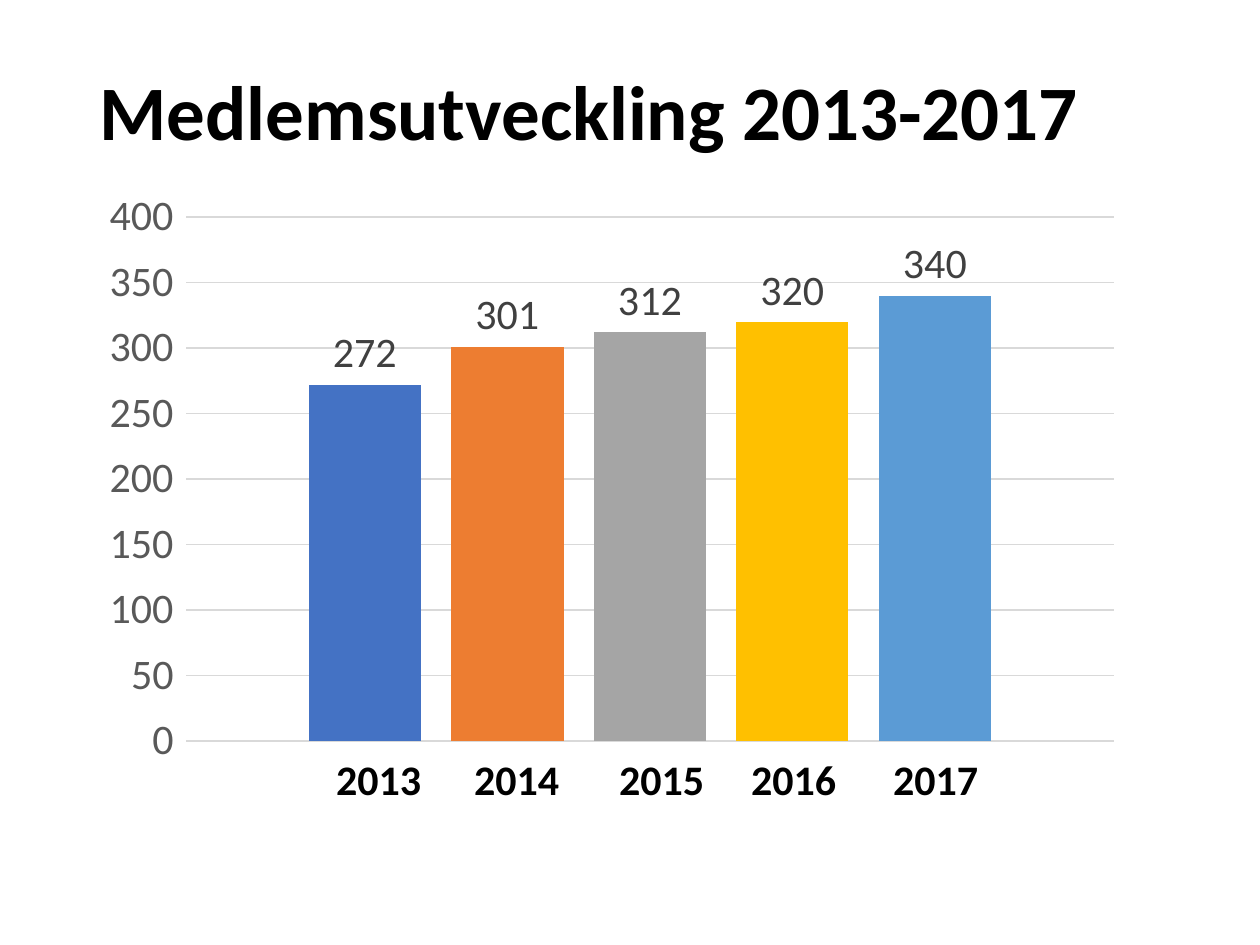
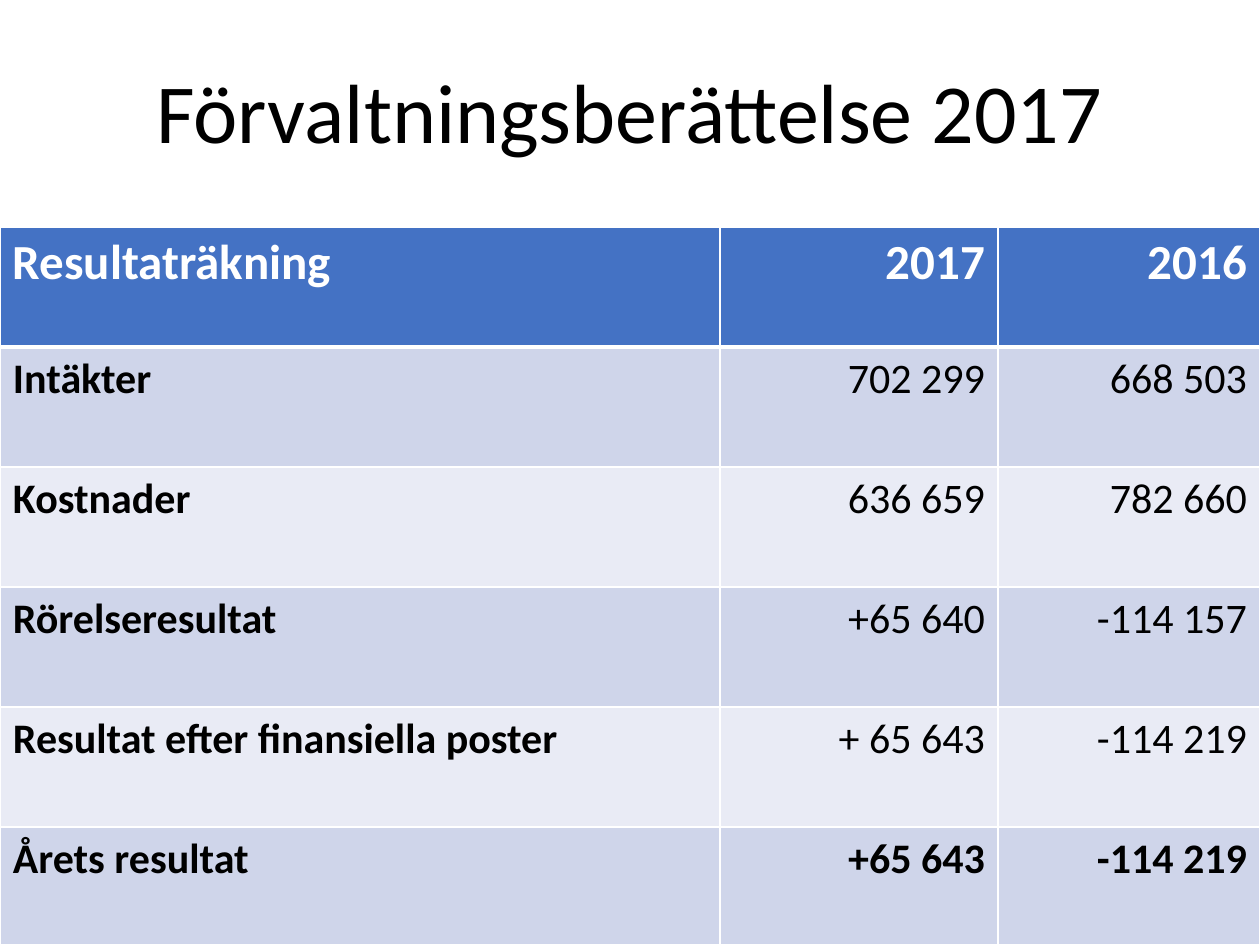
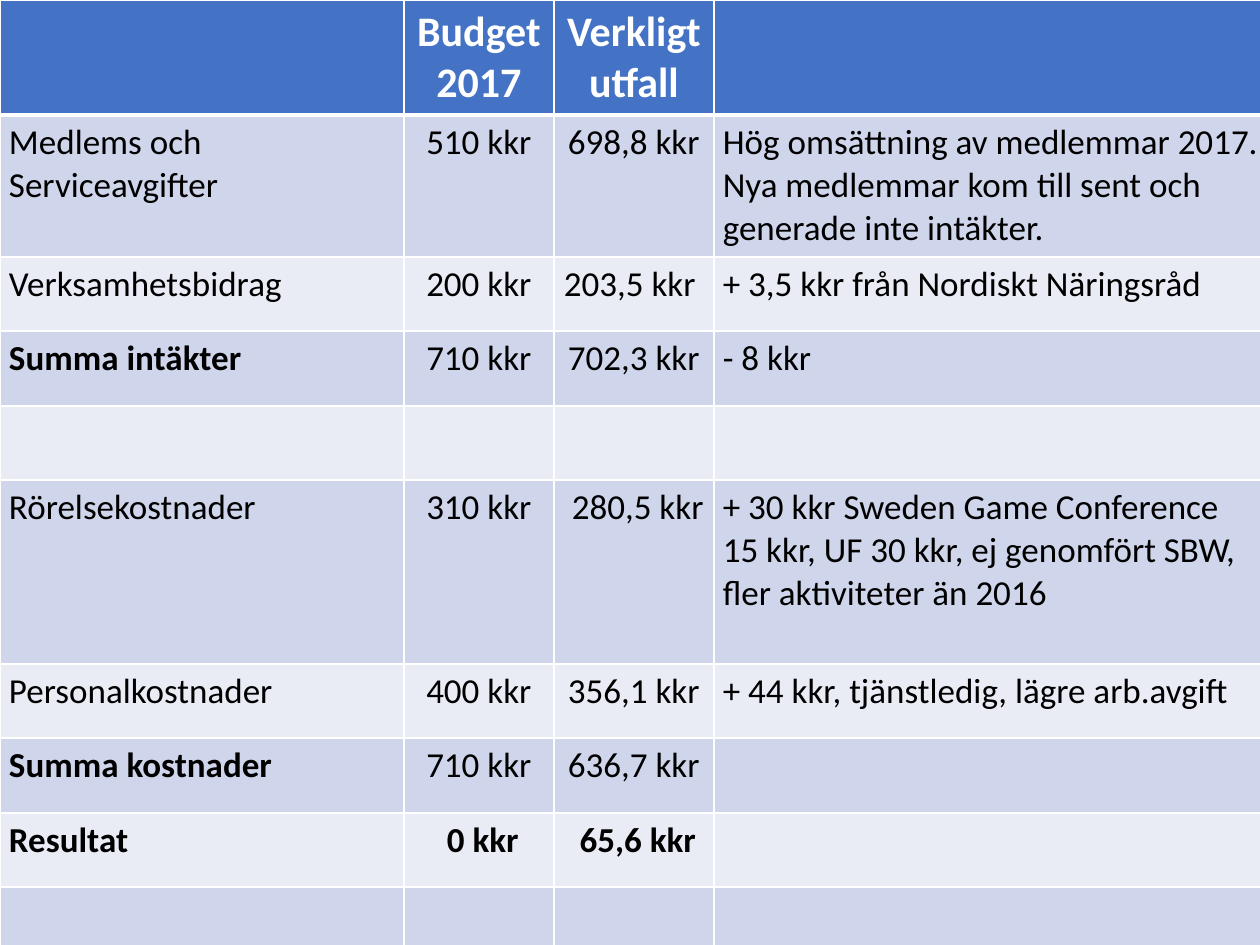
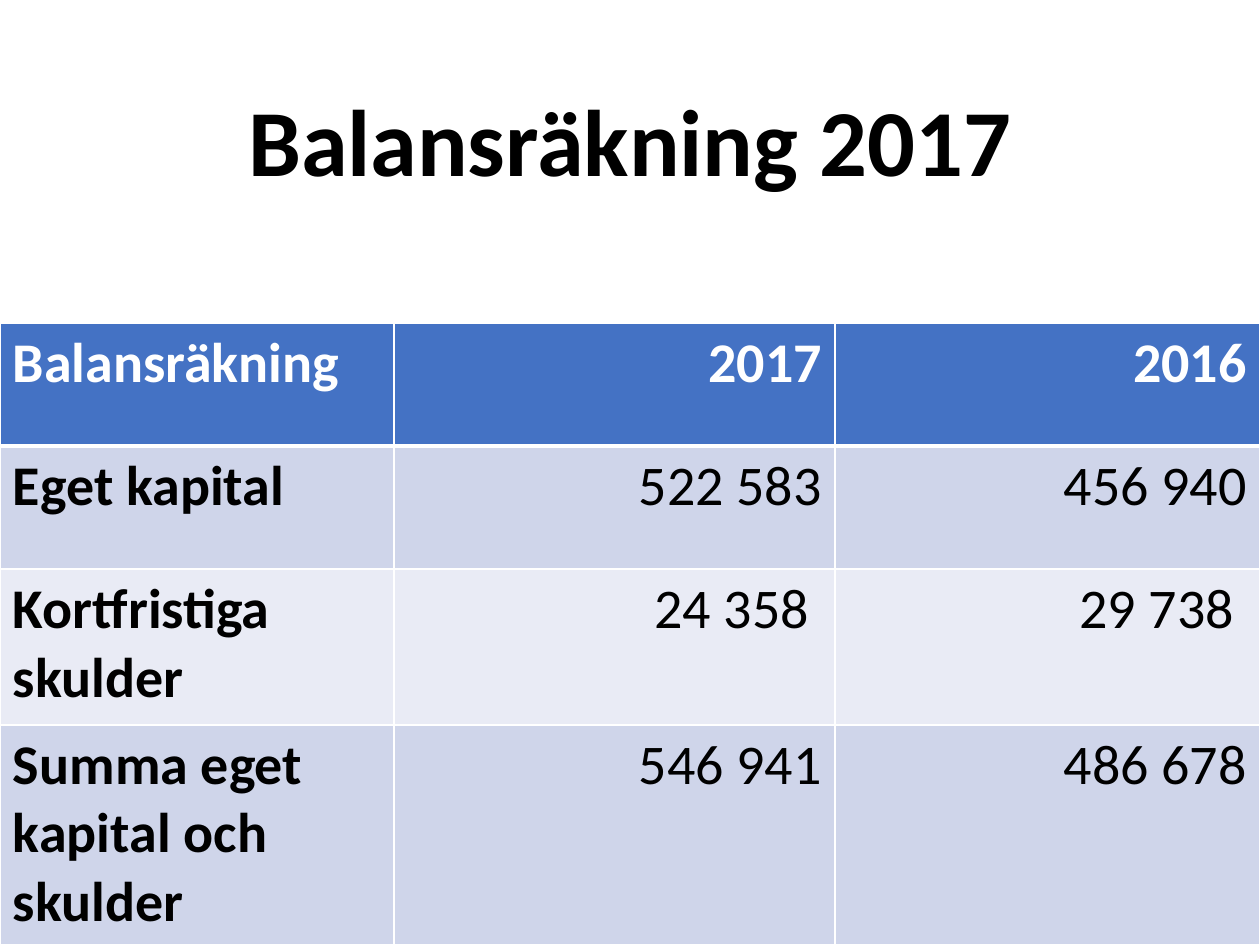
import pptx
import pptx.chart.data
import pptx.dml.color
import pptx.enum.chart
import pptx.enum.text
import pptx.oxml
import pptx.oxml.ns
import pptx.util
from lxml import etree

PX = pptx.util.Inches(10) // 1260
FONT = "Calibri"
BLACK, WHITE, BLUE = "000000", "FFFFFF", "4472C4"
BANDS = ["E9EBF5", "CFD5EA"]
ALIGN = {
    "l": pptx.enum.text.PP_ALIGN.LEFT,
    "c": pptx.enum.text.PP_ALIGN.CENTER,
    "r": pptx.enum.text.PP_ALIGN.RIGHT,
}
hue = pptx.dml.color.RGBColor.from_string
qn = pptx.oxml.ns.qn


def write(par, text, size, bold=False, color=BLACK, align="l"):
    """Add one run per line of text to a paragraph."""
    par.alignment = ALIGN[align]
    for num, line in enumerate(text.split("\n")):
        if num:
            par.add_line_break()
        run = par.add_run()
        run.text = line
        run.font.name = FONT
        run.font.size = pptx.util.Pt(size)
        run.font.bold = bold
        run.font.color.rgb = hue(color)


def grid(page, top, cols, rows, data, sizes, aligns, strong, inset):
    """Add a banded table; sizes are for head and body, strong lists bold cells."""
    frame = page.shapes.add_table(
        len(rows), len(cols), 0, top * PX, sum(cols) * PX, sum(rows) * PX)
    table = frame.table
    for col, width in zip(table.columns, cols):
        col.width = width * PX
    for r, (row, height) in enumerate(zip(table.rows, rows)):
        row.height = height * PX
        for c, cell in enumerate(row.cells):
            cell.margin_left = cell.margin_right = inset * PX
            props = cell._tc.get_or_add_tcPr()
            for side in ("lnL", "lnR", "lnT", "lnB"):
                thick = (r, side) in ((0, "lnB"), (1, "lnT"))
                line = etree.SubElement(
                    props, qn("a:" + side), w=str(pptx.util.Pt(3 if thick else 1)))
                fill = etree.SubElement(line, qn("a:solidFill"))
                etree.SubElement(fill, qn("a:srgbClr"), val=WHITE)
            cell.fill.solid()
            cell.fill.fore_color.rgb = hue(BANDS[r % 2] if r else BLUE)
            if data[r][c]:
                write(cell.text_frame.paragraphs[0], data[r][c], sizes[min(r, 1)],
                      r == 0 or (r, c) in strong, BLACK if r else WHITE, aligns[c])


deck = pptx.Presentation()
deck.slide_width = pptx.util.Inches(10)
deck.slide_height = pptx.util.Inches(7.5)

# Pages and their titles: text, box, size, bold, alignment
heads = [
    ("Medlemsutveckling 2013-2017", (87, 24, 1086, 183), 44, True, "l"),
    ("Förvaltningsberättelse 2017", (115, 0, 1029, 232), 48, False, "c"),
    None,
    ("Balansräkning 2017", (87, 54, 1086, 183), 54, True, "c"),
]
pages = []
for head in heads:
    page = deck.slides.add_slide(deck.slide_layouts[5 if head else 6])
    pages.append(page)
    if head:
        text, box, size, bold, align = head
        title = page.shapes.title
        title.left, title.top, title.width, title.height = [n * PX for n in box]
        title.text_frame.auto_size = pptx.enum.text.MSO_AUTO_SIZE.NONE
        title.text_frame.vertical_anchor = pptx.enum.text.MSO_ANCHOR.MIDDLE
        par = title.text_frame.paragraphs[0]
        par.line_spacing = 0.9
        write(par, text, size, bold, BLACK, align)

# Members per year
members, trend, result, balance = pages
bars = [(272, BLUE), (301, "ED7D31"), (312, "A5A5A5"), (320, "FFC000"), (340, "5B9BD5")]
data = pptx.chart.data.CategoryChartData()
data.categories = ["1"]
for num, (count, color) in enumerate(bars, 1):
    data.add_series(f"Series {num}", [count])
chart = members.shapes.add_chart(
    pptx.enum.chart.XL_CHART_TYPE.COLUMN_CLUSTERED,
    88 * PX, 180 * PX, 1046 * PX, 598 * PX, data).chart
chart.has_legend = chart.has_title = False
chart.font.name = FONT
chart.font.size = pptx.util.Pt(10)
chart.category_axis.visible = False
axis = chart.value_axis
axis.minimum_scale, axis.maximum_scale, axis.major_unit = 0, 400, 50
axis.format.line.fill.background()
axis.major_gridlines.format.line.color.rgb = hue("D9D9D9")
axis.major_gridlines.format.line.width = pptx.util.Pt(0.75)
axis.tick_labels.font.name = FONT
axis.tick_labels.font.size = pptx.util.Pt(24)
axis.tick_labels.font.color.rgb = hue("595959")
plot = chart.plots[0]
plot.gap_width, plot.overlap, plot.vary_by_categories = 219, -27, False
for series, (count, color) in zip(plot.series, bars):
    series.format.fill.solid()
    series.format.fill.fore_color.rgb = hue(color)
    labels = series.data_labels
    labels.show_value = True
    labels.position = pptx.enum.chart.XL_LABEL_POSITION.OUTSIDE_END
    labels.font.name = FONT
    labels.font.size = pptx.util.Pt(24)
    labels.font.color.rgb = hue("404040")

area = chart._chartSpace.chart.plotArea
for old in area.findall(qn("c:layout")):
    area.remove(old)
layout = etree.Element(qn("c:layout"))
manual = etree.SubElement(layout, qn("c:manualLayout"))
for tag, val in [("layoutTarget", "inner"), ("xMode", "edge"), ("yMode", "edge"),
                 ("x", 98 / 1046), ("y", 37 / 598), ("w", 928 / 1046), ("h", 524 / 598)]:
    etree.SubElement(manual, qn("c:" + tag), val=str(val))
area.insert(0, layout)

years = members.shapes.add_textbox(307 * PX, 747 * PX, 801 * PX, 63 * PX).text_frame
years.word_wrap = True
years.margin_left = 29 * PX
par = years.paragraphs[0]
tabs = etree.SubElement(par._p.get_or_add_pPr(), qn("a:tabLst"))
for stop in (138, 283, 415, 557):
    etree.SubElement(tabs, qn("a:tab"), pos=str(stop * PX), algn="l")
write(par, "\t".join(str(year) for year in range(2013, 2018)), 24, True)

# Income statement
rows = [
    ("Resultaträkning", "2017", "2016"),
    ("Intäkter", "702 299", "668 503"),
    ("Kostnader", "636 659", "782 660"),
    ("Rörelseresultat", "+65 640", "-114 157"),
    ("Resultat efter finansiella poster", "+ 65 643", "-114 219"),
    ("Årets resultat", "+65 643", "-114 219"),
]
strong = [(r, 0) for r in range(6)] + [(5, 1), (5, 2)]
grid(trend, 227, (720, 278, 262), [120] * 5 + [118], rows, (28, 24), "lrr", strong, 13)

# Budget and outcome
rows = [
    ("", "Budget 2017", "Verkligt utfall", ""),
    ("Medlems och Serviceavgifter", "510 kkr", "698,8 kkr",
     "Hög omsättning av medlemmar 2017. Nya medlemmar kom till sent och "
     "generade inte intäkter."),
    ("Verksamhetsbidrag", "200 kkr", "203,5 kkr ", "+ 3,5 kkr från Nordiskt Näringsråd"),
    ("Summa intäkter", "710 kkr", "702,3 kkr", "- 8 kkr"),
    ("", "", "", ""),
    ("Rörelsekostnader", "310 kkr", " 280,5 kkr",
     "+ 30 kkr Sweden Game Conference \n"
     "15 kkr, UF 30 kkr, ej genomfört SBW, fler aktiviteter än 2016"),
    ("Personalkostnader", "400 kkr", "356,1 kkr", "+ 44 kkr, tjänstledig, lägre arb.avgift"),
    ("Summa kostnader", "710 kkr", "636,7 kkr", ""),
    ("Resultat", " 0 kkr", " 65,6 kkr", ""),
    ("", "", "", ""),
]
strong = [(3, 0), (7, 0), (8, 0), (8, 1), (8, 2)]
grid(result, 0, (404, 150, 160, 565), (114, 142, 74, 75, 74, 184, 74, 75, 74, 74),
     rows, (24, 20), "lccl", strong, 9)

# Balance sheet
rows = [
    ("Balansräkning", "2017", "2016"),
    ("Eget kapital", "522 583", "456 940"),
    ("Kortfristiga skulder", "24 358 ", "29 738 "),
    ("Summa eget kapital och skulder", "546 941", "486 678"),
]
strong = [(r, 0) for r in range(4)]
grid(balance, 323, (394, 441, 425), (123, 123, 156, 220), rows, (32, 32), "lrr", strong, 13)

deck.save("out.pptx")
